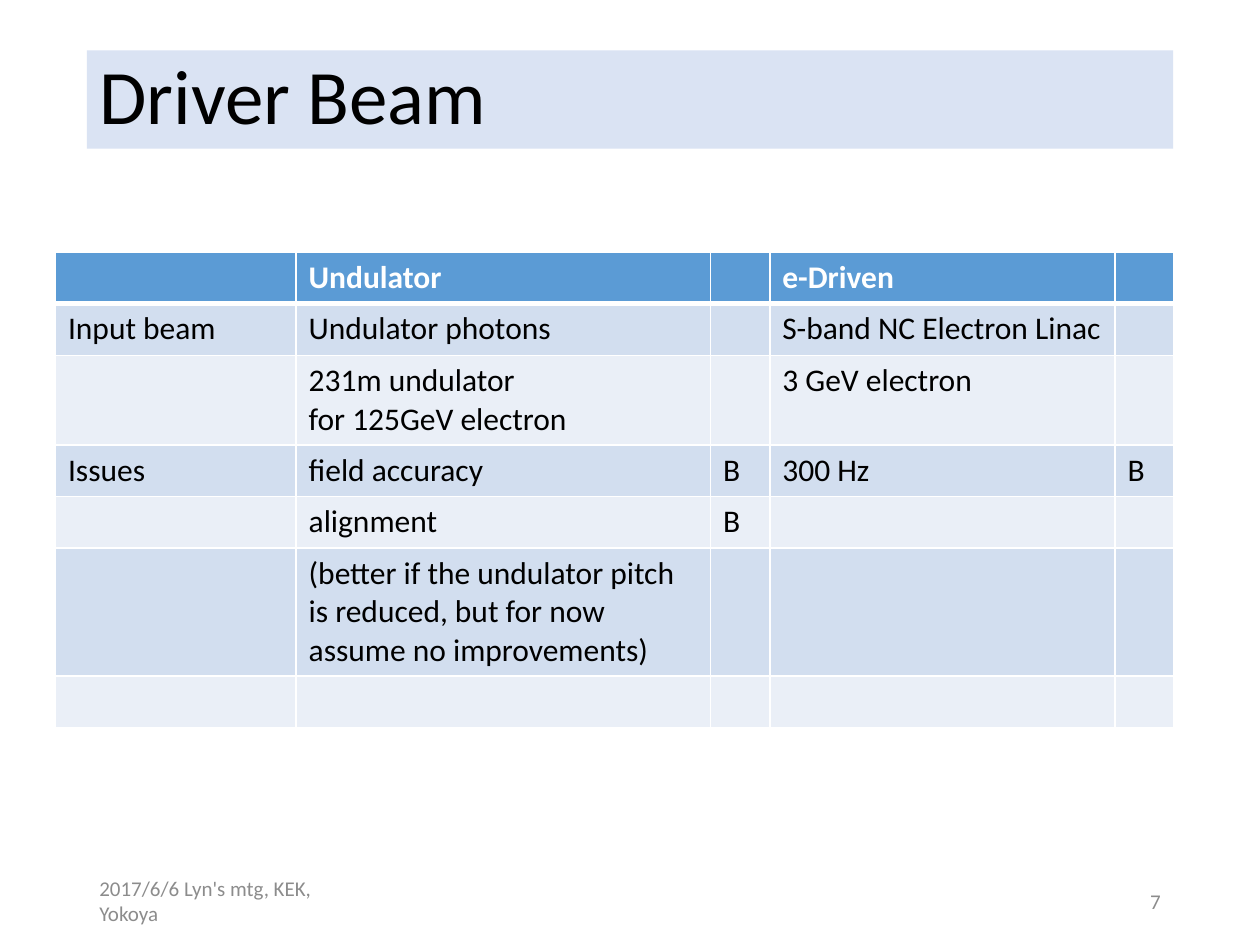
from lxml import etree
from pptx import Presentation
from pptx.dml.color import RGBColor
from pptx.enum.text import MSO_ANCHOR, PP_ALIGN
from pptx.oxml.ns import qn
from pptx.util import Inches, Pt

LEFT, RIGHT = PP_ALIGN.LEFT, PP_ALIGN.RIGHT
MIDDLE = MSO_ANCHOR.MIDDLE
TITLE_ONLY = 5
FONT = "Calibri"
COLORS = {
    "title": "DAE3F3",
    "header": "5B9BD5",
    "odd": "D2DEEF",
    "even": "EAEFF7",
    "white": "FFFFFF",
    "black": "000000",
    "gray": "8C8C8C",
}
PAGE_WIDTH, PAGE_HEIGHT = 10, 7.5
MARGIN = 0.69
CONTENT_WIDTH = PAGE_WIDTH - 2 * MARGIN
FOOTER_WIDTH = 2.25
COLUMN_WIDTHS = [1.91, 3.29, 0.47, 2.74, 0.47]
ROW_HEIGHT = 0.41
ROWS = [
    ["", "Undulator", "", "e-Driven", ""],
    ["Input beam", "Undulator photons", "", "S-band NC Electron Linac", ""],
    ["", "231m undulator\nfor 125GeV electron", "", "3 GeV electron", ""],
    ["Issues", "field accuracy", "B", "300 Hz", "B"],
    ["", "alignment", "B", "", ""],
    ["", "(better if the undulator pitch is reduced, but for now assume no improvements)", "", "", ""],
    ["", "", "", "", ""],
]


def color(name):
    return RGBColor.from_string(COLORS[name])


def write(frame, text, size=18, ink="black", bold=False, align=LEFT, spacing=None):
    frame.text = text
    for para in frame.paragraphs:
        para.alignment = align
        if spacing:
            para.line_spacing = spacing
        para.font.size = Pt(size)
        for span in para.runs:
            span.font.name = FONT
            span.font.size = Pt(size)
            span.font.bold = bold
            span.font.color.rgb = color(ink)


def place(shape, box):
    shape.left, shape.top, shape.width, shape.height = map(Inches, box)


def border(cell, bottom):
    properties = cell._tc.get_or_add_tcPr()
    for side, width in (("lnL", 1), ("lnR", 1), ("lnT", 1), ("lnB", bottom)):
        line = etree.SubElement(properties, qn(f"a:{side}"), w=str(Pt(width)))
        fill = etree.SubElement(line, qn("a:solidFill"))
        etree.SubElement(fill, qn("a:srgbClr"), val=COLORS["white"])


def add_title(page, box, text):
    title = page.shapes.title
    place(title, box)
    title.fill.solid()
    title.fill.fore_color.rgb = color("title")
    write(title.text_frame, text, size=44, spacing=0.9)
    title.text_frame.vertical_anchor = MIDDLE


def add_comparison(page, box):
    frame = page.shapes.add_table(len(ROWS), len(COLUMN_WIDTHS), *map(Inches, box))
    table = frame.table
    for column, width in zip(table.columns, COLUMN_WIDTHS):
        column.width = Inches(width)
    for index, texts in enumerate(ROWS):
        header = index == 0
        band = "header" if header else "odd" if index % 2 else "even"
        table.rows[index].height = Inches(ROW_HEIGHT)
        for cell, text in zip(table.rows[index].cells, texts):
            border(cell, 3 if header or index == 0 else 1)
            cell.fill.solid()
            cell.fill.fore_color.rgb = color(band)
            write(cell.text_frame, text, ink="white" if header else "black", bold=header)


def add_footer(page, box, text, align):
    frame = page.shapes.add_textbox(*map(Inches, box)).text_frame
    frame.word_wrap = True
    frame.vertical_anchor = MIDDLE
    write(frame, text, size=12, ink="gray", align=align)


def main():
    deck = Presentation()
    deck.slide_width, deck.slide_height = Inches(PAGE_WIDTH), Inches(PAGE_HEIGHT)
    page = deck.slides.add_slide(deck.slide_layouts[TITLE_ONLY])
    add_title(page, (MARGIN, 0.4, CONTENT_WIDTH, 0.78), "Driver Beam")
    add_comparison(page, (0.44, 2, sum(COLUMN_WIDTHS), ROW_HEIGHT * len(ROWS)))
    footers = (
        (MARGIN, "2017/6/6 Lyn's mtg, KEK, Yokoya", LEFT),
        (PAGE_WIDTH - MARGIN - FOOTER_WIDTH, "7", RIGHT),
    )
    for left, text, align in footers:
        add_footer(page, (left, 6.95, FOOTER_WIDTH, 0.4), text, align)
    deck.save("out.pptx")


if __name__ == "__main__":
    main()
